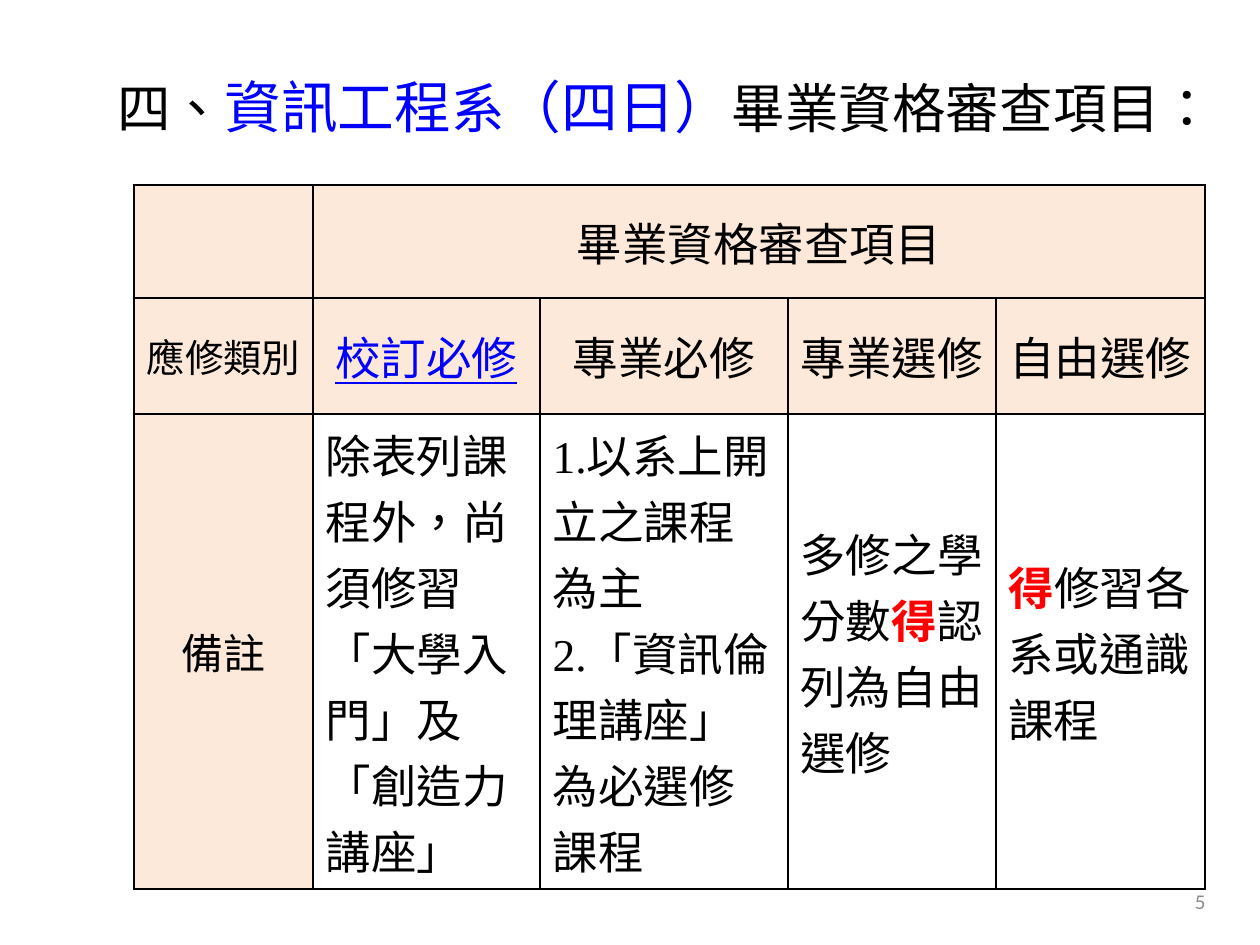
from dataclasses import dataclass

from lxml import etree
from pptx import Presentation
from pptx.dml.color import RGBColor
from pptx.enum import text
from pptx.oxml import ns
from pptx.util import Pt

PX = 914400 // 126  # EMU in one px


@dataclass(frozen=True)
class Theme:
    black: str = "000000"
    blue: str = "0000FF"
    red: str = "FF0000"
    grey: str = "8C8C8C"
    peach: str = "FDE9D9"
    cjk: str = "Noto Sans CJK JP"
    serif: str = "Times New Roman"
    sans: str = "Calibri"
    language: str = "zh-TW"
    title: float = 30.6
    title_big: float = 32.4
    body: int = 26
    note_label: int = 24
    type_label: int = 22
    page: int = 12
    inner_line: float = 1
    outer_line: float = 1.5


T = Theme()
CENTER, LEFT, RIGHT = text.PP_ALIGN.CENTER, text.PP_ALIGN.LEFT, text.PP_ALIGN.RIGHT
MIDDLE = text.MSO_ANCHOR.MIDDLE


def style(font, face, size, color=T.black, bold=False, underline=False):
    font.name, font.size = face, Pt(size)
    font.bold, font.underline = bold, underline
    font.color.rgb = RGBColor.from_string(color)
    font._element.set("lang", T.language)
    ea = etree.Element(ns.qn("a:ea"), typeface=T.cjk)
    font._element.find(ns.qn("a:latin")).addnext(ea)


def add_box(slide, box):
    sp = slide.shapes.add_textbox(*(v * PX for v in box))
    tf = sp.text_frame
    tf.word_wrap = True
    tf.vertical_anchor = MIDDLE
    return tf.paragraphs[0]


def add_title(slide, box):
    p = add_box(slide, box)
    for words, size, color in [
        ("四、", T.title, T.black),
        ("資訊工程", T.title_big, T.blue),
        ("系", T.title, T.blue),
        ("（四日）", T.title_big, T.blue),
        ("畢業資格審查項目：", T.title, T.black),
    ]:
        r = p.add_run()
        r.text = words
        style(r.font, T.cjk, size, color)


def add_page_number(slide, box):
    p = add_box(slide, box)
    p.text, p.alignment = "5", RIGHT
    style(p.font, T.sans, T.page, T.grey)


def set_borders(cell, outer_sides):
    tc_pr = cell._tc.get_or_add_tcPr()
    for i, side in enumerate("LRTB"):
        width = T.outer_line if side in outer_sides else T.inner_line
        ln = etree.Element(ns.qn(f"a:ln{side}"), w=str(Pt(width)))
        fill = etree.SubElement(ln, ns.qn("a:solidFill"))
        etree.SubElement(fill, ns.qn("a:srgbClr"), val=T.black)
        tc_pr.insert(i, ln)


def fill_cell(cell, lines, align, size=T.body, color=T.black, underline=False):
    """Each line is a string, or a list of (words, emphasised) pairs."""
    cell.vertical_anchor = MIDDLE
    tf = cell.text_frame
    for i, line in enumerate(lines):
        p = tf.add_paragraph() if i else tf.paragraphs[0]
        p.alignment = align
        if isinstance(line, str):
            p.text = line
            p.runs[0].font._element.set("lang", T.language)
            style(p.font, T.serif, size, color, underline=underline)
            continue
        for words, strong in line:
            r = p.add_run()
            r.text = words
            style(r.font, T.serif, size, T.red if strong else color, bold=strong)


def add_requirements(slide, box):
    # The notes row takes the height left under the two heading rows
    cols, headings = [179, 227, 248, 208, 209], [113, 116]
    rows = headings + [box[3] - sum(headings)]
    tbl = slide.shapes.add_table(len(rows), len(cols), *(v * PX for v in box)).table
    for line, size in zip(tbl.columns, cols):
        line.width = size * PX
    for line, size in zip(tbl.rows, rows):
        line.height = size * PX

    # Fills and frame: peach for the headings, a heavier outer line
    last_row, last_col = len(rows) - 1, len(cols) - 1
    for y in range(len(rows)):
        for x in range(len(cols)):
            cell = tbl.cell(y, x)
            if y < last_row or x == 0:
                cell.fill.solid()
                cell.fill.fore_color.rgb = RGBColor.from_string(T.peach)
            else:
                cell.fill.background()
            edges = {"L": x == 0, "R": x == last_col, "T": y == 0, "B": y == last_row}
            set_borders(cell, [side for side, outer in edges.items() if outer])

    # Headings
    tbl.cell(0, 1).merge(tbl.cell(0, last_col))
    fill_cell(tbl.cell(0, 1), ["畢業資格審查項目"], CENTER)
    fill_cell(tbl.cell(1, 0), ["應修類別"], CENTER, T.type_label)
    fill_cell(tbl.cell(1, 1), ["校訂必修"], CENTER, color=T.blue, underline=True)
    for x, name in enumerate(["專業必修", "專業選修", "自由選修"], 2):
        fill_cell(tbl.cell(1, x), [name], CENTER)

    # Notes
    fill_cell(tbl.cell(2, 0), ["備註"], CENTER, T.note_label)
    notes = [
        ["除表列課程外，尚須修習「大學入門」及「創造力講座」"],
        ["1.以系上開立之課程為主", "2.「資訊倫理講座」為必選修課程"],
        [[("多修之學分數", False), ("得", True), ("認列為自由選修", False)]],
        [[("得", True), ("修習各系或通識課程", False)]],
    ]
    for x, lines in enumerate(notes, 1):
        fill_cell(tbl.cell(2, x), lines, LEFT)


def main():
    prs = Presentation()
    prs.slide_width, prs.slide_height = 1260 * PX, 945 * PX
    slide = prs.slides.add_slide(prs.slide_layouts[6])
    add_page_number(slide, (924, 876, 294, 50))
    add_requirements(slide, (134, 185, 1071, 704))
    add_title(slide, (105, 37, 1113, 137))
    prs.save("out.pptx")


if __name__ == "__main__":
    main()
